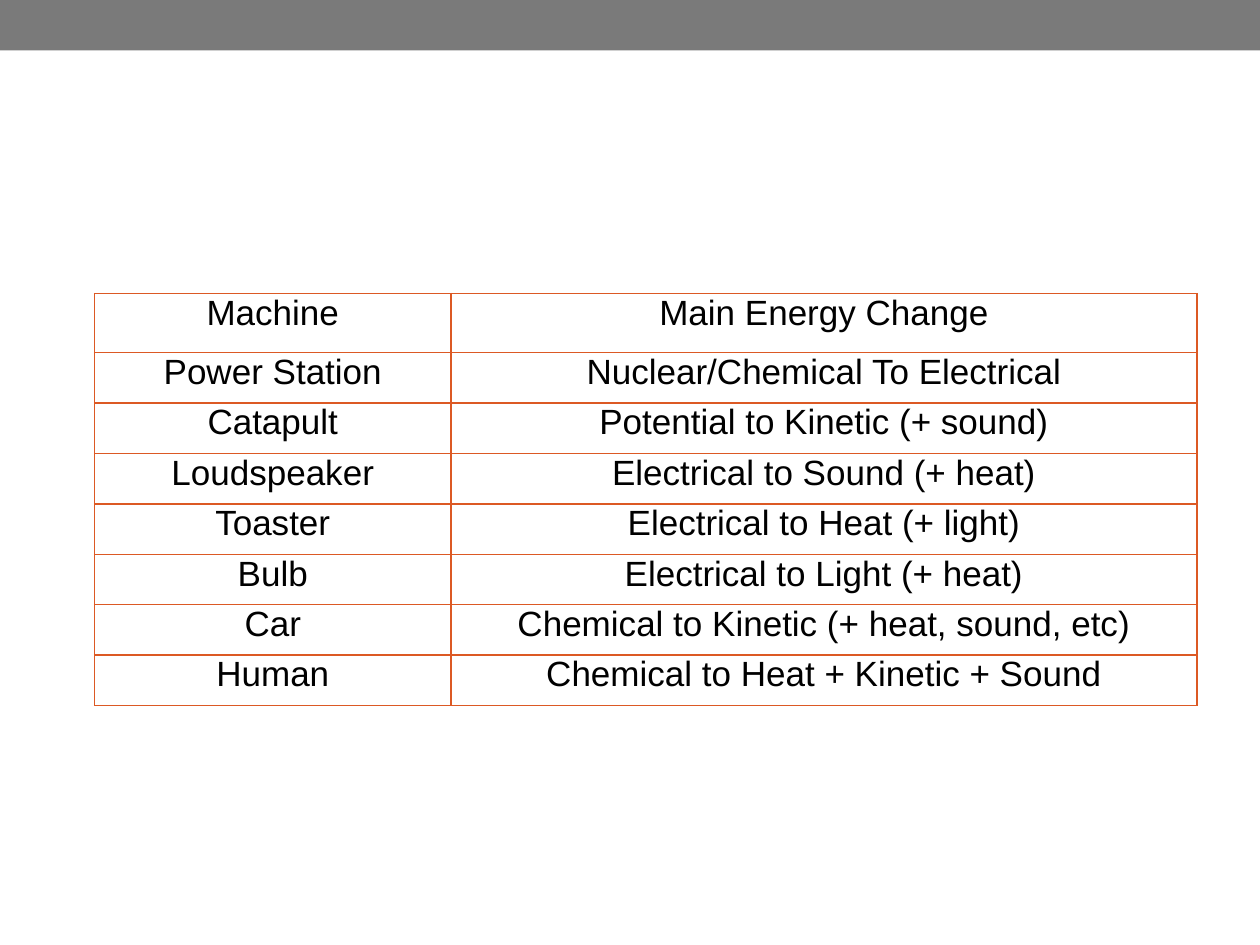
from lxml import etree
from pptx import Presentation, util as u
from pptx.dml.color import RGBColor
from pptx.enum import shapes, text
from pptx.oxml import ns

ROWS = [
    ("Machine", "Main Energy Change"),
    ("Power Station", "Nuclear/Chemical To Electrical"),
    ("Catapult", "Potential to Kinetic (+ sound)"),
    ("Loudspeaker", "Electrical to Sound (+ heat)"),
    ("Toaster", "Electrical to Heat (+ light)"),
    ("Bulb", "Electrical to Light (+ heat)"),
    ("Car", "Chemical to Kinetic (+ heat, sound, etc)"),
    ("Human", "Chemical to Heat + Kinetic + Sound"),
]


def rgb(value):
    return RGBColor.from_string(value)


def write(tf, value, size=20, font="Arial", color="000000",
          align=text.PP_ALIGN.CENTER):
    p = tf.paragraphs[0]
    p.alignment = align
    r = p.add_run()
    r.text = value
    r.font.size = u.Pt(size)
    r.font.name = font
    r.font.color.rgb = rgb(color)


class SlideBuilder:
    BAR = "7A7A7A"
    BORDER = "DC5924"

    def __init__(self, slide):
        self.s = slide

    def bar(self, x, y, w, h):
        sp = self.s.shapes.add_shape(
            shapes.MSO_SHAPE.RECTANGLE,
            u.Inches(x), u.Inches(y), u.Inches(w), u.Inches(h))
        sp.shadow.inherit = False
        sp.fill.solid()
        sp.fill.fore_color.rgb = rgb(self.BAR)
        sp.line.fill.background()

    def borders(self, cell, width=1):
        tc_pr = cell._tc.get_or_add_tcPr()
        for side in ("lnL", "lnR", "lnT", "lnB"):
            ln = etree.SubElement(tc_pr, ns.qn(f"a:{side}"), w=str(u.Pt(width)))
            fill = etree.SubElement(ln, ns.qn("a:solidFill"))
            etree.SubElement(fill, ns.qn("a:srgbClr"), val=self.BORDER)

    def table(self, x, y, widths, heights, rows):
        table = self.s.shapes.add_table(
            len(rows), len(widths), u.Inches(x), u.Inches(y),
            u.Inches(sum(widths)), u.Inches(sum(heights))).table
        table.first_row = table.horz_banding = False
        for column, width in zip(table.columns, widths):
            column.width = u.Inches(width)
        for row, height, values in zip(table.rows, heights, rows):
            row.height = u.Inches(height)
            for cell, value in zip(row.cells, values):
                self.borders(cell)
                cell.fill.background()
                cell.margin_left = cell.margin_right = u.Inches(0.07)
                cell.margin_top = cell.margin_bottom = 0
                write(cell.text_frame, value)


def main():
    prs = Presentation()
    prs.slide_width, prs.slide_height = u.Inches(10), u.Inches(7.5)
    builder = SlideBuilder(prs.slides.add_slide(prs.slide_layouts[6]))

    # Top band
    builder.bar(0, 0, 10, 0.4)

    # Energy changes, with a slightly taller heading row
    heights = [0.47] + [0.4] * (len(ROWS) - 1)
    builder.table(0.75, 2.33, [2.83, 5.92], heights, ROWS)

    prs.save("out.pptx")


if __name__ == "__main__":
    main()
